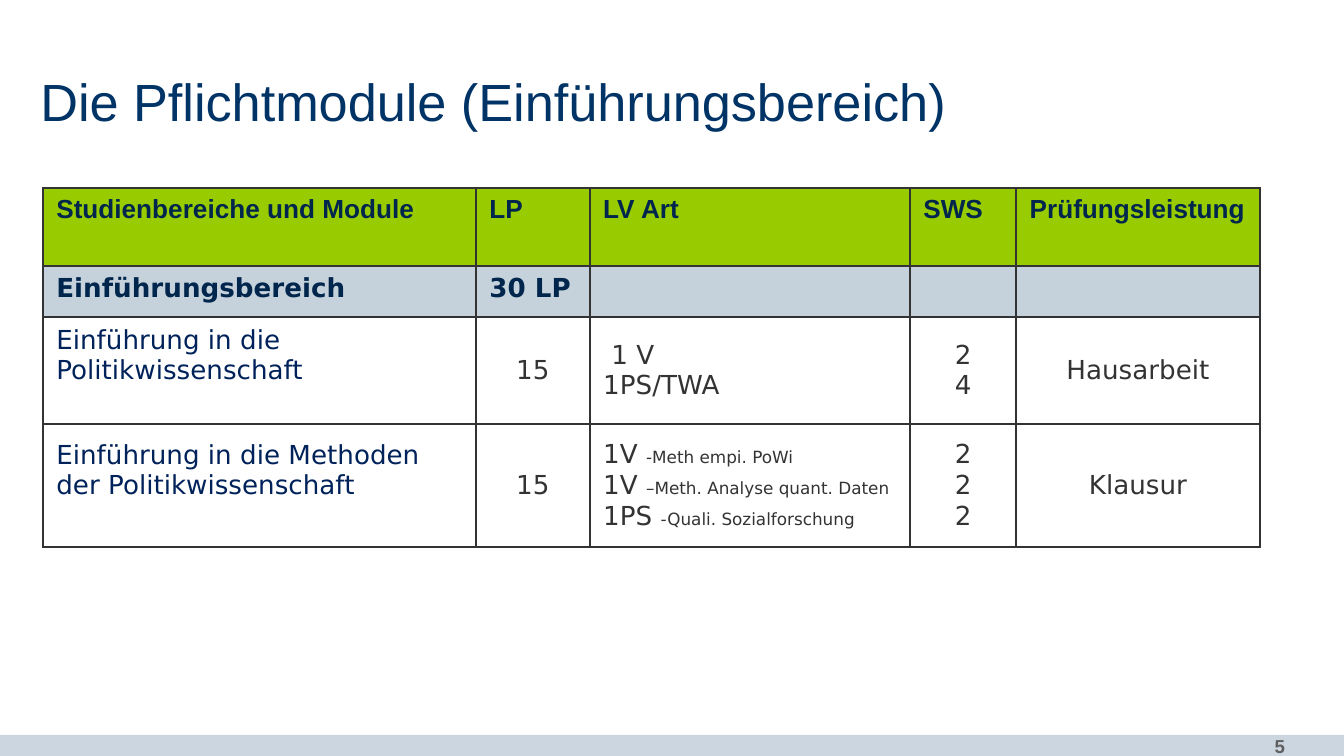
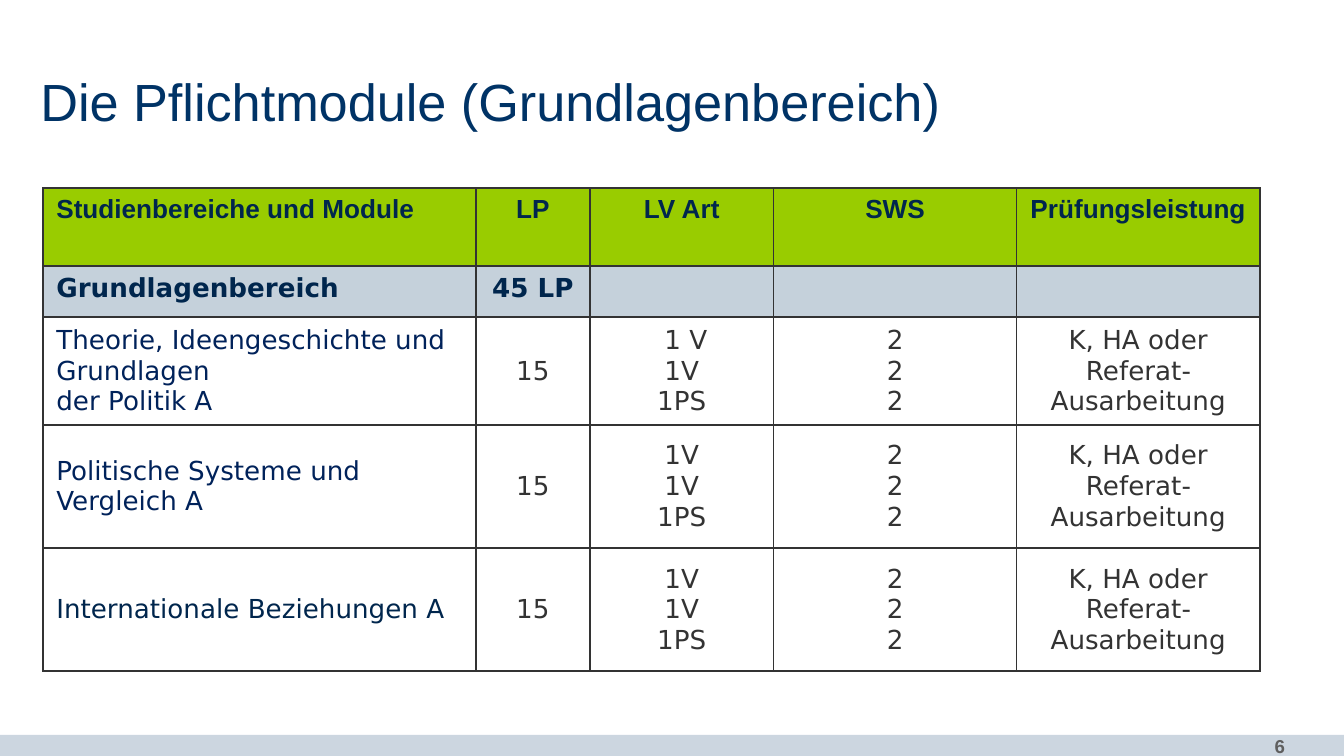
from lxml import etree
from pptx import Presentation
from pptx.dml.color import RGBColor
from pptx.enum import shapes, text
from pptx.oxml import ns
from pptx.util import Pt

NAVY = RGBColor(0x00, 0x33, 0x66)
DARK = RGBColor(0x00, 0x26, 0x4D)
BLUE = RGBColor(0x00, 0x22, 0x5A)
INK = RGBColor(0x33, 0x33, 0x33)
GREY = RGBColor(0x5F, 0x5F, 0x5F)
GREEN = RGBColor(0x99, 0xCC, 0x00)
STEEL = RGBColor(0xC5, 0xD1, 0xDB)
BAND = RGBColor(0xCC, 0xD6, 0xE0)
WHITE = RGBColor(0xFF, 0xFF, 0xFF)

LEFT, MID, RIGHT = text.PP_ALIGN.LEFT, text.PP_ALIGN.CENTER, text.PP_ALIGN.RIGHT
TITLE = dict(name="Arial", size=Pt(28), color=NAVY, bold=False)
PAGE = dict(name="Arial", size=Pt(10), color=GREY, bold=True)
HEAD = dict(name="Arial", size=Pt(14), color=DARK, bold=True)
AREA = dict(HEAD, name="DejaVu Sans")
NAME = dict(AREA, color=BLUE, bold=False)
BODY = dict(NAME, color=INK)
NOTE = dict(BODY, size=Pt(9))

TOPS = ["Studienbereiche und Module", "LP", "LV Art", "SWS", "Prüfungsleistung"]
EXAM = "K, HA oder Referat-Ausarbeitung"
TALL = [41.75, 27.5, 56.25, 66, 66]
LINE = 16.3

PAGES = [
    dict(
        num="5", title="Die Pflichtmodule (Einführungsbereich)",
        cols=[232, 61, 171.5, 57, 130.5],
        head=[LEFT] * 5, body=[LEFT, MID, LEFT, MID, MID], lift=LINE,
        rows=[
            ["Einführungsbereich", "30 LP", "", "", ""],
            ["Einführung in die Politikwissenschaft", "15", " 1 V\n1PS/TWA",
             "2\n4", "Hausarbeit"],
            ["Einführung in die Methoden der Politikwissenschaft", "15",
             "1V |-Meth empi. PoWi\n1V |–Meth. Analyse quant. Daten\n"
             "1PS |-Quali. Sozialforschung", "2\n2\n2", "Klausur"],
        ],
    ),
    dict(
        num="6", title="Die Pflichtmodule (Grundlagenbereich)",
        cols=[232, 61, 98.5, 130.25, 130.25],
        head=[LEFT] + [MID] * 4, body=[LEFT] + [MID] * 4, lift=0,
        rows=[
            ["Grundlagenbereich", "45 LP", "", "", ""],
            ["Theorie, Ideengeschichte und Grundlagen\nder Politik A", "15",
             " 1 V\n1V\n1PS", "2\n2\n2", EXAM],
            ["Politische Systeme und Vergleich A", "15", "1V\n1V\n1PS",
             "2\n2\n2", EXAM],
            ["Internationale Beziehungen A", "15", "1V\n1V\n1PS",
             "2\n2\n2", EXAM],
        ],
    ),
]


def write(frame, words, look, align):
    frame.word_wrap = True
    for i, line in enumerate(words.split("\n")):
        para = frame.paragraphs[0] if i == 0 else frame.add_paragraph()
        para.alignment = align
        if not line:
            end = etree.SubElement(para._p, ns.qn("a:endParaRPr"))
            end.set("sz", str(int(look["size"].pt * 100)))
            continue
        for style, part in zip([look, NOTE], line.split("|")):
            run = para.add_run()
            run.text = part
            for key, val in style.items():
                if key == "color":
                    run.font.color.rgb = val
                else:
                    setattr(run.font, key, val)


def edge(cell):
    props = cell._tc.get_or_add_tcPr()
    for i, side in enumerate(["lnL", "lnR", "lnT", "lnB"]):
        line = etree.Element(ns.qn("a:" + side), w=str(Pt(1)))
        fill = etree.SubElement(line, ns.qn("a:solidFill"))
        etree.SubElement(fill, ns.qn("a:srgbClr"), val=str(INK))
        props.insert(i, line)


prs = Presentation()
prs.slide_width, prs.slide_height = Pt(720), Pt(405)

for page in PAGES:
    slide = prs.slides.add_slide(prs.slide_layouts[6])

    band = slide.shapes.add_shape(
        shapes.MSO_SHAPE.RECTANGLE, Pt(0), Pt(393.75), Pt(720), Pt(11.25))
    band.shadow.inherit = False
    band.fill.solid()
    band.fill.fore_color.rgb = BAND
    band.line.fill.background()

    box = slide.shapes.add_textbox(Pt(599), Pt(390.25), Pt(96.5), Pt(14.5))
    write(box.text_frame, page["num"], PAGE, RIGHT)

    box = slide.shapes.add_textbox(Pt(21.6), Pt(45.5), Pt(680.5), Pt(25))
    frame = box.text_frame
    for side in ["left", "top", "right", "bottom"]:
        setattr(frame, "margin_" + side, 0)
    frame.vertical_anchor = text.MSO_ANCHOR.BOTTOM
    write(frame, page["title"], TITLE, LEFT)

    rows = [TOPS] + page["rows"]
    tall = TALL[:len(rows)]
    grid = slide.shapes.add_table(
        len(rows), len(TOPS), Pt(23), Pt(100.75),
        Pt(sum(page["cols"])), Pt(sum(tall))).table
    grid.first_row = grid.horz_banding = False
    for col, wide in zip(grid.columns, page["cols"]):
        col.width = Pt(wide)
    for r, row in enumerate(rows):
        grid.rows[r].height = Pt(tall[r])
        for c, words in enumerate(row):
            cell = grid.cell(r, c)
            cell.fill.solid()
            cell.fill.fore_color.rgb = [GREEN, STEEL, WHITE][min(r, 2)]
            edge(cell)
            if r < 2:
                look, align = [HEAD, AREA][r], page["head"][c]
            else:
                look, align = BODY if c else NAME, page["body"][c]
                cell.vertical_anchor = text.MSO_ANCHOR.MIDDLE
                if c == 0:
                    cell.margin_bottom = Pt(3.6 + page["lift"])
                if r == 4 and c == 0:
                    look = dict(NAME, color=DARK)
            write(cell.text_frame, words, look, align)

prs.save("out.pptx")
